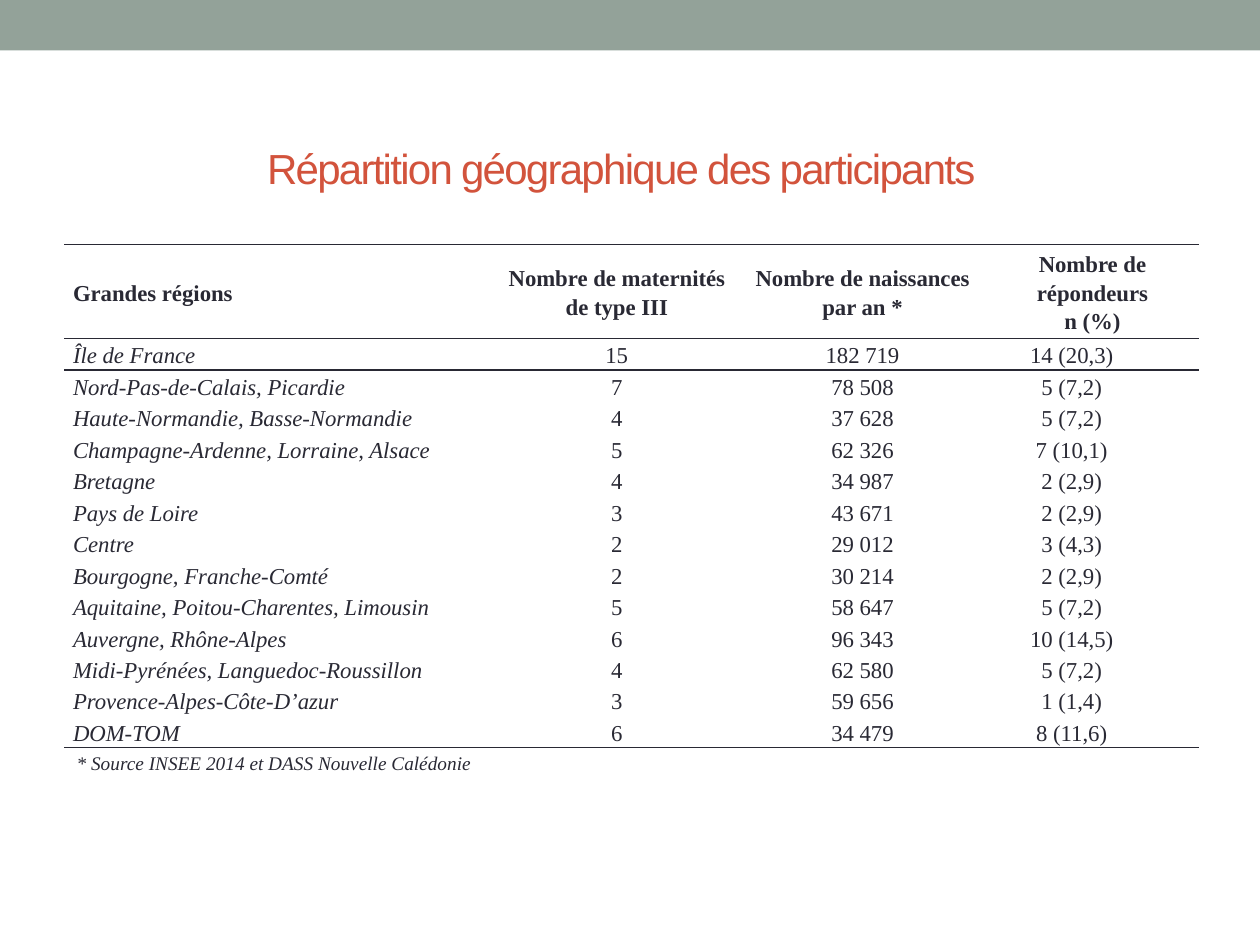
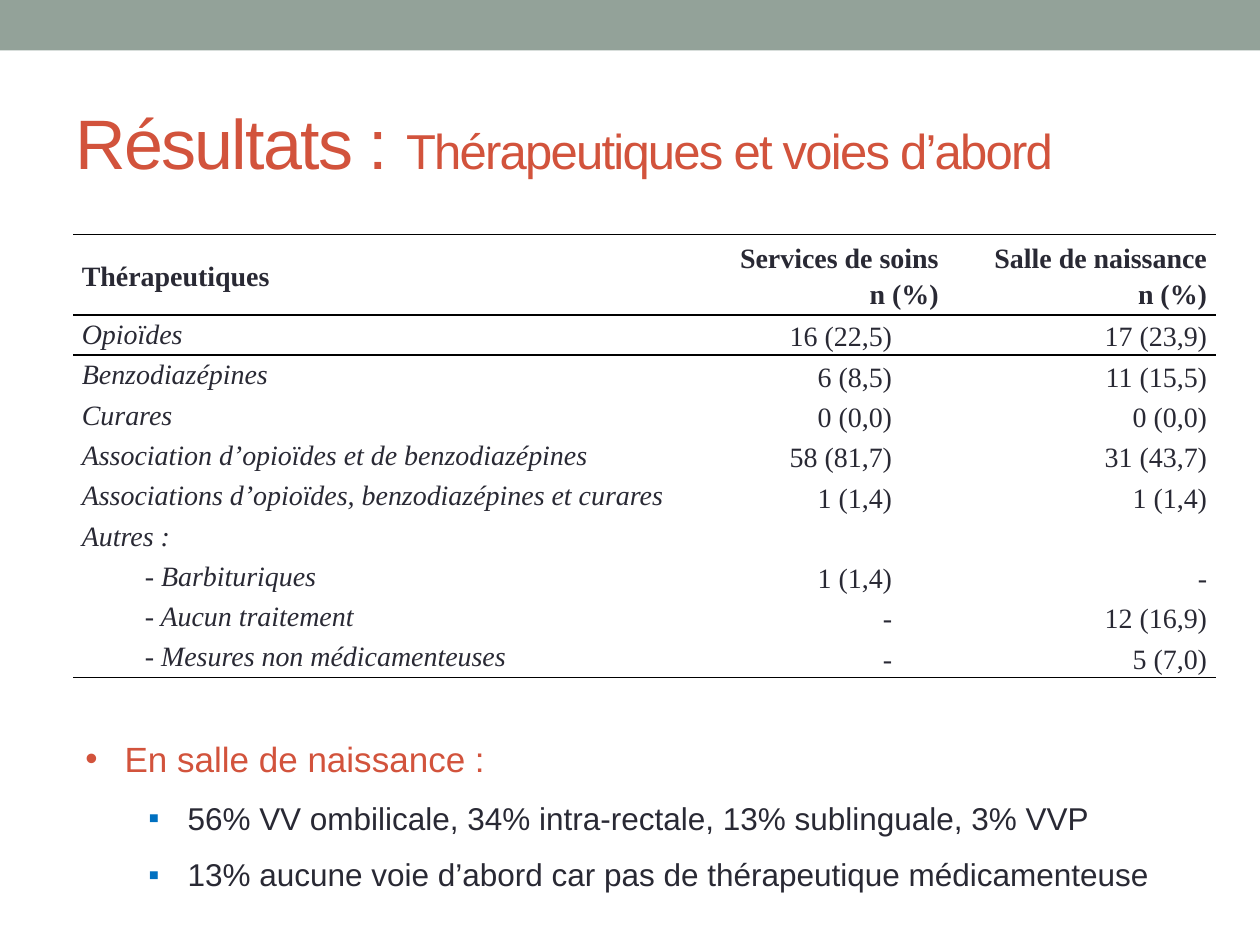
from lxml import etree
from pptx import Presentation, util as u
from pptx.dml.color import RGBColor
from pptx.enum import shapes, text
from pptx.oxml import ns

SAGE = RGBColor(0x93, 0xA2, 0x99)
RUST = RGBColor(0xD2, 0x53, 0x3C)
INK = RGBColor(0x29, 0x29, 0x34)
BLACK = RGBColor(0, 0, 0)
BLUE = RGBColor(0x00, 0x70, 0xC0)
WHITE = RGBColor(0xFF, 0xFF, 0xFF)
SANS, SERIF = "Arial", "Times New Roman"
LEFT, MID, RIGHT = text.PP_ALIGN.LEFT, text.PP_ALIGN.CENTER, text.PP_ALIGN.RIGHT
TOP, HALF = text.MSO_ANCHOR.TOP, text.MSO_ANCHOR.MIDDLE
WIDE, HIGH = 10, 7.5
PLAIN = "{2D5ABB26-0587-4C30-8999-92F81FD0307C}"

AREAS = [
    ("Grandes régions", "Nombre de maternités de type III",
     "Nombre de naissances par an *", "Nombre de répondeurs\nn (%)"),
    ("Île de France", "15", "182 719", "14 (20,3)"),
    ("Nord-Pas-de-Calais, Picardie", "7", "78 508", "5 (7,2)"),
    ("Haute-Normandie, Basse-Normandie", "4", "37 628", "5 (7,2)"),
    ("Champagne-Ardenne, Lorraine, Alsace", "5", "62 326", "7 (10,1)"),
    ("Bretagne", "4", "34 987", "2 (2,9)"),
    ("Pays de Loire", "3", "43 671", "2 (2,9)"),
    ("Centre", "2", "29 012", "3 (4,3)"),
    ("Bourgogne, Franche-Comté", "2", "30 214", "2 (2,9)"),
    ("Aquitaine, Poitou-Charentes, Limousin", "5", "58 647", "5 (7,2)"),
    ("Auvergne, Rhône-Alpes", "6", "96 343", "10 (14,5)"),
    ("Midi-Pyrénées, Languedoc-Roussillon", "4", "62 580", "5 (7,2)"),
    ("Provence-Alpes-Côte-D’azur", "3", "59 656", "1 (1,4)"),
    ("DOM-TOM", "6", "34 479", "8 (11,6)"),
]
CARE = [
    ("Thérapeutiques", "Services de soins\nn (%)", "Salle de naissance\nn (%)"),
    ("Opioïdes", "16 (22,5)", "17 (23,9)"),
    ("Benzodiazépines", "6 (8,5)", "11 (15,5)"),
    ("Curares", "0 (0,0)", "0 (0,0)"),
    ("Association d’opioïdes et de benzodiazépines", "58 (81,7)", "31 (43,7)"),
    ("Associations d’opioïdes, benzodiazépines et curares", "1 (1,4)", "1 (1,4)"),
    ("Autres :", "", ""),
    ("- Barbituriques", "1 (1,4)", "-"),
    ("- Aucun traitement", "-", "12 (16,9)"),
    ("- Mesures non médicamenteuses", "-", "5 (7,0)"),
]
ROUTES = [
    ("En salle de naissance :", dict(size=20, color=RUST, mark="•", tint=RUST, left=0.31)),
    ("56% VV ombilicale, 34% intra-rectale, 13% sublinguale, 3% VVP", {}),
    ("13% aucune voie d’abord car pas de thérapeutique médicamenteuse", {}),
]
POINT = dict(size=18, mark="▪", tint=BLUE, left=0.81, hang=0.31, gap=1.5)


def write(para, words, size=18, font=SANS, color=INK, bold=False, ital=False,
          align=LEFT, gap=None, left=0, right=0, hang=0, mark=None, tint=None, track=None):
    para.alignment = align
    if gap:
        para.line_spacing = gap
    props = para._p.get_or_add_pPr()
    for key, inch in (("marL", left), ("marR", right), ("indent", -hang)):
        if inch:
            props.set(key, str(u.Inches(inch)))
    if mark:
        hue = etree.SubElement(props, ns.qn("a:buClr"))
        etree.SubElement(hue, ns.qn("a:srgbClr"), val=str(tint))
        etree.SubElement(props, ns.qn("a:buFont"), typeface=SANS)
        etree.SubElement(props, ns.qn("a:buChar"), char=mark)
    run = para.add_run()
    run.text = words
    face = run.font
    face.size, face.name, face.bold, face.italic = u.Pt(size), font, bold, ital
    face.color.rgb = color
    if track:
        run._r.get_or_add_rPr().set("spc", str(int(track * 100)))


def box(slide, *area, anchor=TOP):
    frame = slide.shapes.add_textbox(*map(u.Inches, area)).text_frame
    frame.word_wrap = True
    frame.vertical_anchor = anchor
    return frame


def page(deck, area, parts, align=LEFT):
    slide = deck.slides.add_slide(deck.slide_layouts[6])
    band = slide.shapes.add_shape(shapes.MSO_SHAPE.RECTANGLE, 0, 0,
                                  u.Inches(WIDE), u.Inches(0.4))
    band.shadow.inherit = False
    band.fill.solid()
    band.fill.fore_color.rgb = SAGE
    band.line.fill.background()
    para = box(slide, *area, anchor=HALF).paragraphs[0]
    for words, size in parts:
        write(para, words, size=size, color=RUST, align=align, track=-1)
    return slide


def rule(cell, sides, color):
    props = cell._tc.get_or_add_tcPr()
    for spot, side in enumerate(sides):
        line = etree.Element(ns.qn("a:ln" + side), w=str(u.Pt(1)))
        fill = etree.SubElement(line, ns.qn("a:solidFill"))
        etree.SubElement(fill, ns.qn("a:srgbClr"), val=str(color))
        props.insert(spot, line)


def grid(slide, data, x, y, cols, head, step, size, ink, align, pads, label):
    last = len(data) - 1
    tall = head + step * last
    table = slide.shapes.add_table(len(data), len(cols),
                                   *map(u.Inches, (x, y, sum(cols), tall))).table
    table.first_row = table.horz_banding = False
    table._tbl.tblPr[0].text = PLAIN
    for col, wide in zip(table.columns, cols):
        col.width = u.Inches(wide)
    for r, row in enumerate(data):
        table.rows[r].height = u.Inches(step if r else head)
        for c, words in enumerate(row):
            cell = table.cell(r, c)
            cell.margin_left = cell.margin_right = u.Inches(0.07)
            cell.margin_top = cell.margin_bottom = 0
            cell.vertical_anchor = label if r and not c else HALF
            cell.fill.solid()
            cell.fill.fore_color.rgb = WHITE
            rule(cell, {0: "TB", 1: "T", last: "B"}.get(r, ""), ink)
            for n, part in enumerate(words.split("\n")):
                frame = cell.text_frame
                para = frame.add_paragraph() if n else frame.paragraphs[0]
                write(para, part, size=size, font=SERIF, bold=not r,
                      ital=bool(r and not c), align=align if c else LEFT, gap=1.15,
                      left=0.5 if not c and part.startswith("- ") else 0,
                      right=pads.get(c, 0) if r else 0)


def main():
    deck = Presentation()
    deck.slide_width, deck.slide_height = u.Inches(WIDE), u.Inches(HIGH)

    slide = page(deck, (0.43, 1.07, 9, 0.52),
                 [("Répartition géographique des participants", 24)], MID)
    grid(slide, AREAS, 0.51, 1.94, (3.41, 1.95, 1.95, 1.7), 0.71, 0.24,
         13, INK, MID, {3: 0.33}, HALF)
    write(box(slide, 0.51, 5.91, 6.85, 0.29).paragraphs[0],
          "* Source INSEE 2014 et DASS Nouvelle Calédonie",
          size=11, font=SERIF, ital=True)

    slide = page(deck, (0.5, 0.58, 9, 1.08),
                 [("Résultats : ", 40), ("Thérapeutiques et voies d’abord", 28)])
    grid(slide, CARE, 0.58, 1.86, (4.89, 2.05, 2.13), 0.64, 0.32,
         16, BLACK, RIGHT, {1: 0.37}, TOP)
    frame = box(slide, 0.58, 5.64, 8.99, 1.46)
    for n, (words, form) in enumerate(ROUTES):
        para = frame.add_paragraph() if n else frame.paragraphs[0]
        write(para, words, **{**POINT, **form})

    deck.save("out.pptx")


if __name__ == "__main__":
    main()
